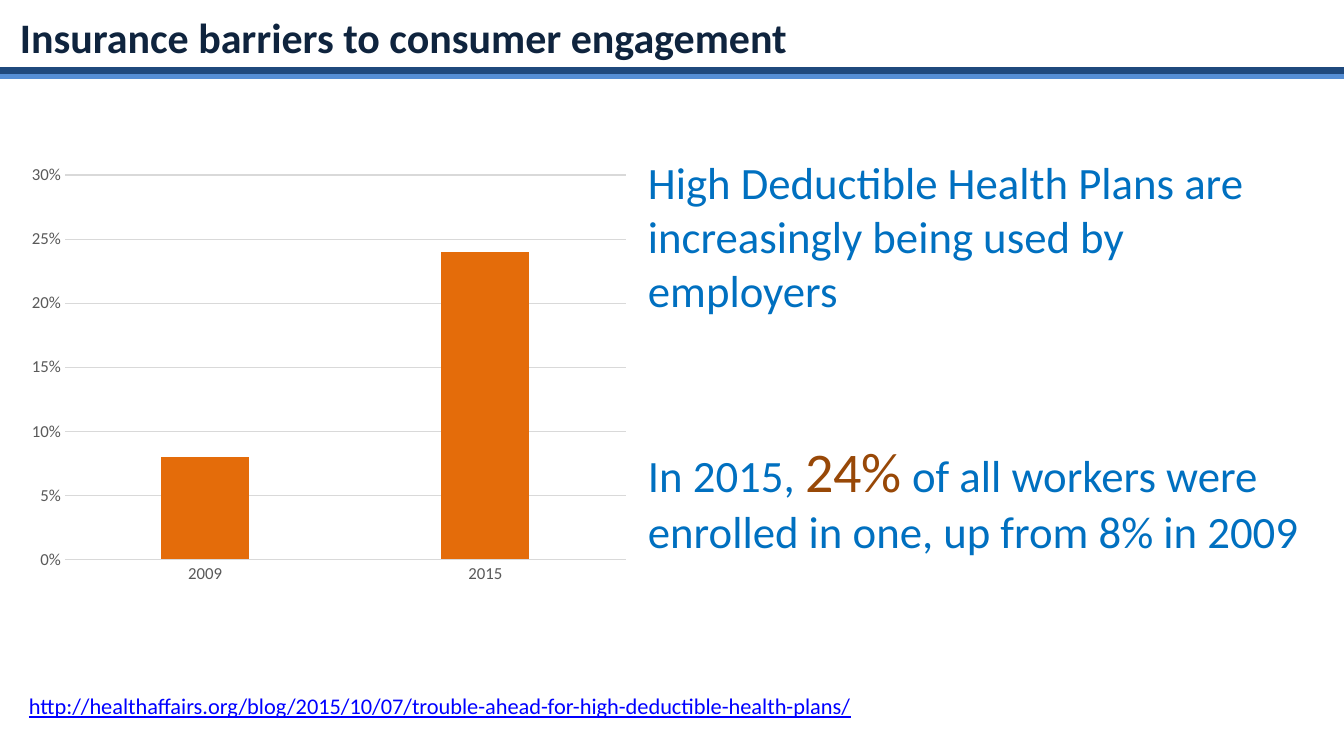
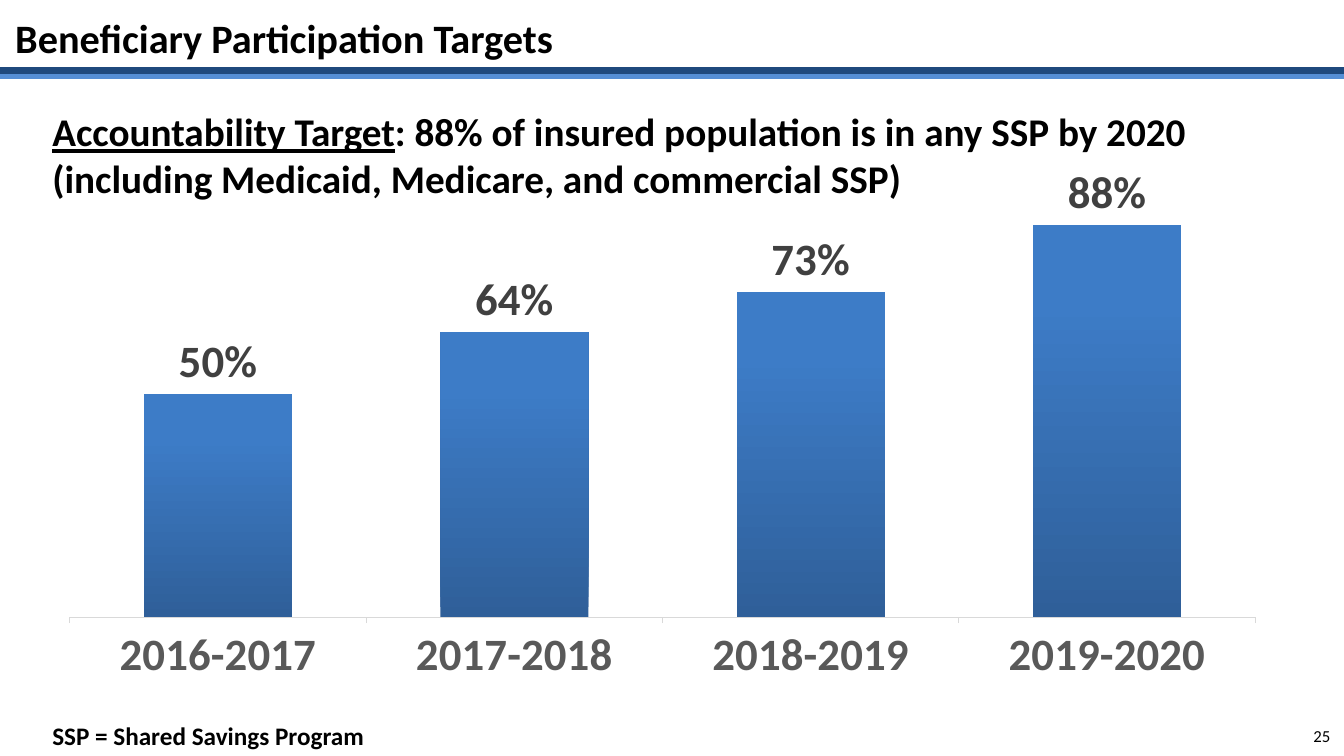
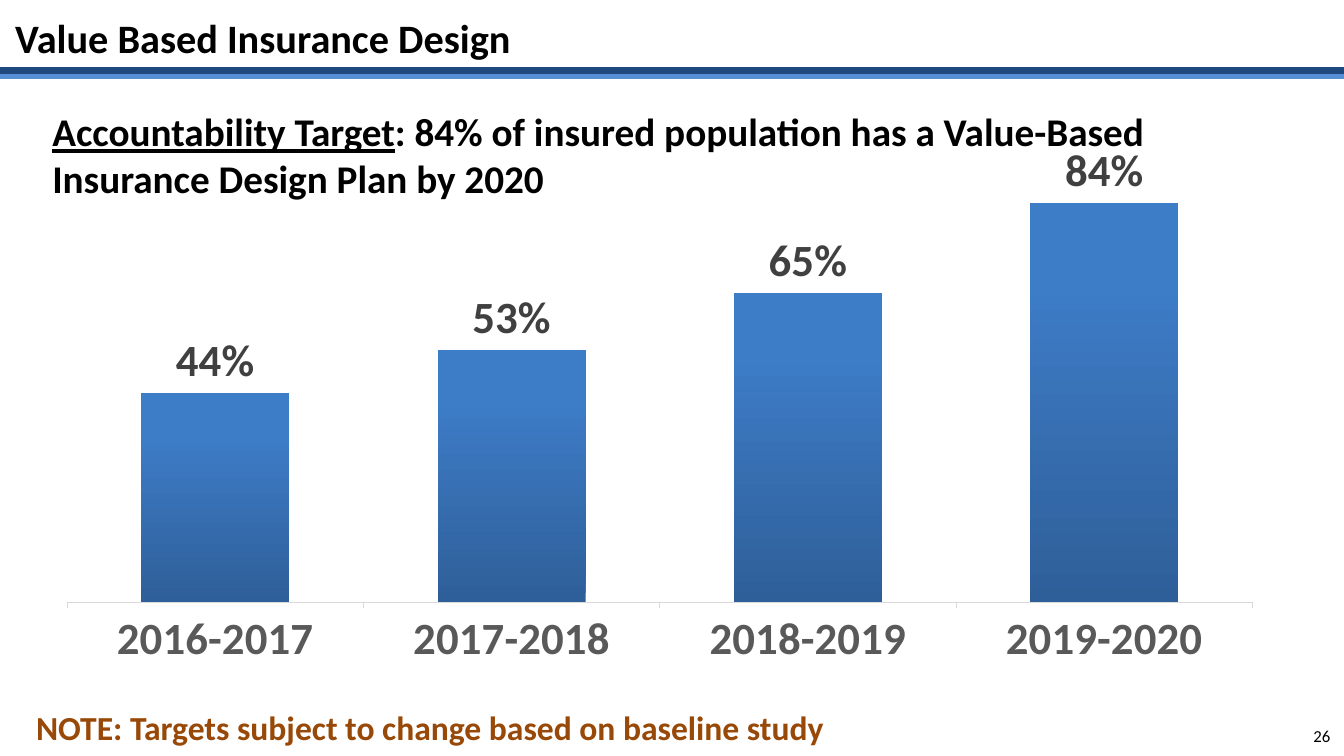
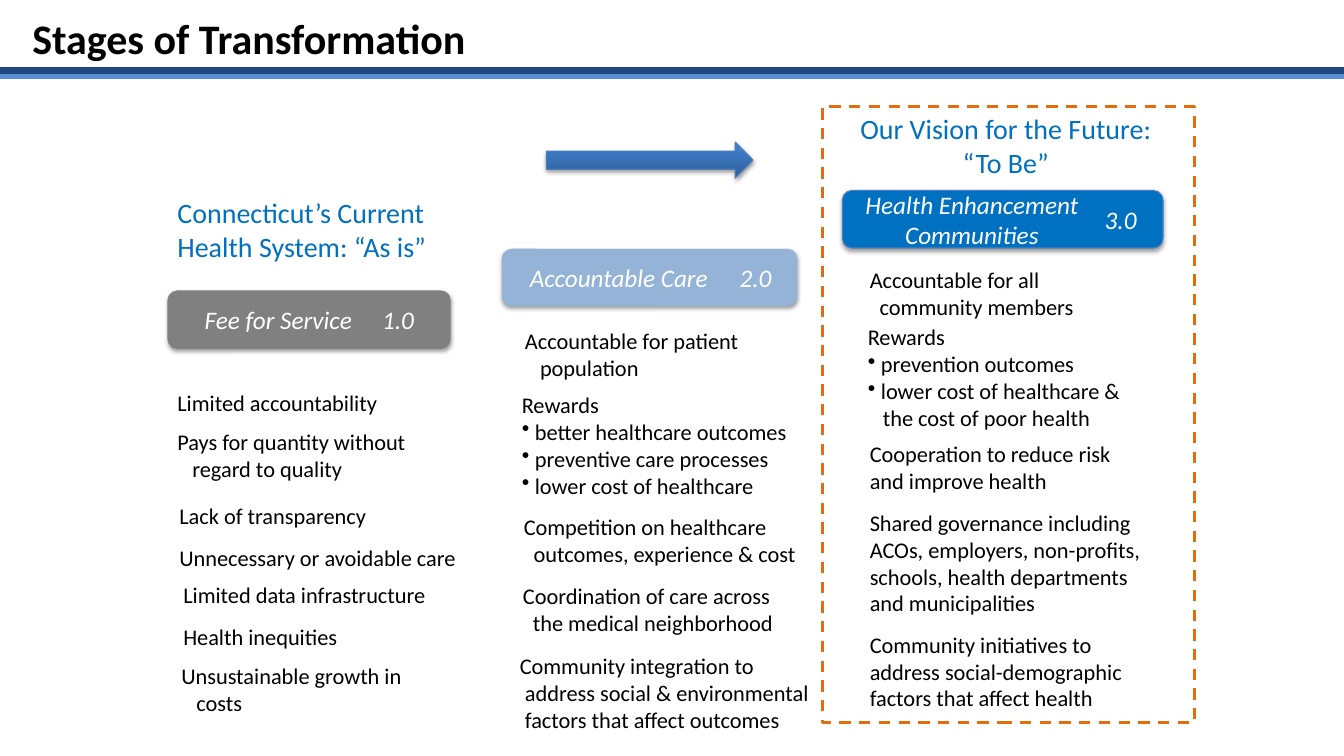
from dataclasses import dataclass
from typing import NamedTuple

from lxml.etree import SubElement
from pptx import Presentation
from pptx.chart.data import CategoryChartData
from pptx.dml.color import RGBColor
from pptx.enum.chart import XL_CHART_TYPE, XL_LABEL_POSITION, XL_TICK_MARK
from pptx.enum.dml import MSO_LINE
from pptx.enum.shapes import MSO_CONNECTOR, MSO_SHAPE
from pptx.enum.text import MSO_ANCHOR, PP_ALIGN
from pptx.oxml import parse_xml
from pptx.oxml.ns import nsdecls, qn
from pptx.util import Cm, Pt

FONT = "Calibri"
BLACK = RGBColor(0x00, 0x00, 0x00)
WHITE = RGBColor(0xFF, 0xFF, 0xFF)
INK_NAVY = RGBColor(0x0F, 0x24, 0x3E)
RULE_NAVY = RGBColor(0x1F, 0x49, 0x7D)
RULE_BLUE = RGBColor(0x55, 0x8E, 0xD5)
BRIGHT_BLUE = RGBColor(0x00, 0x70, 0xC0)
LINK_BLUE = RGBColor(0x00, 0x00, 0xFF)
PALE_BLUE = RGBColor(0x95, 0xB3, 0xD7)
EDGE_BLUE = RGBColor(0x4B, 0x7E, 0xBC)
GRADIENT_DARK = RGBColor(0x2F, 0x5F, 0x99)
GRADIENT_LIGHT = RGBColor(0x3D, 0x7C, 0xC7)
ORANGE = RGBColor(0xE4, 0x6C, 0x0A)
BROWN = RGBColor(0x98, 0x48, 0x07)
GRAY = RGBColor(0x80, 0x80, 0x80)
AXIS_GRAY = RGBColor(0x59, 0x59, 0x59)
LABEL_GRAY = RGBColor(0x40, 0x40, 0x40)
GRID_GRAY = RGBColor(0xD9, 0xD9, 0xD9)

SLIDE_WIDTH = 33.87
VERSION_ZONE = 1.55
BULLET_INDENT = 0.33


class Box(NamedTuple):
    """Position and size in centimetres."""
    left: float
    top: float
    width: float
    height: float

    def lengths(self) -> tuple:
        return tuple(Cm(value) for value in self)


@dataclass(frozen=True)
class Run:
    text: str
    size: float = 16
    color: RGBColor = BLACK
    bold: bool = False
    italic: bool = False
    underline: bool = False


@dataclass(frozen=True)
class Line:
    text: str
    indent: float = 0
    bullet: bool = False


@dataclass(frozen=True)
class Note:
    left: float
    top: float
    lines: tuple


@dataclass(frozen=True)
class Stage:
    name: str
    version: str
    version_left: float
    badge: Box
    fill: RGBColor
    edge: RGBColor | None
    note_width: float
    notes: tuple


@dataclass(frozen=True)
class Target:
    """One slide with an accountability target and its yearly values."""
    title: str
    statement: str
    number: str
    values: tuple
    chart_box: Box
    plot: tuple
    maximum: float
    footnote: Run
    footnote_box: Box


def add_runs(paragraph, runs) -> None:
    for item in runs:
        run = paragraph.add_run()
        run.text = item.text
        font = run.font
        font.name, font.size = FONT, Pt(item.size)
        font.bold, font.italic = item.bold, item.italic
        font.underline = item.underline
        font.color.rgb = item.color


def add_text(slide, box: Box, *runs: Run, align=PP_ALIGN.LEFT, anchor=MSO_ANCHOR.TOP):
    shape = slide.shapes.add_textbox(*box.lengths())
    frame = shape.text_frame
    frame.word_wrap = True
    frame.vertical_anchor = anchor
    frame.paragraphs[0].alignment = align
    add_runs(frame.paragraphs[0], runs)
    return shape


def add_slide(presentation, title: Run, box: Box):
    slide = presentation.slides.add_slide(presentation.slide_layouts[5])
    shape = slide.shapes.title
    shape.left, shape.top, shape.width, shape.height = box.lengths()
    frame = shape.text_frame
    frame.vertical_anchor = MSO_ANCHOR.MIDDLE
    frame.paragraphs[0].alignment = PP_ALIGN.LEFT
    add_runs(frame.paragraphs[0], [title])
    return slide


def move_header_rules_to_layout(slide) -> None:
    """Draw the two title rules and store them in the slide's layout."""
    for shape_id, (top, color) in enumerate(((1.9, RULE_BLUE), (1.78, RULE_NAVY)), 101):
        rule = slide.shapes.add_connector(
            MSO_CONNECTOR.STRAIGHT, Cm(0), Cm(top), Cm(SLIDE_WIDTH), Cm(top))
        rule.line.color.rgb, rule.line.width = color, Pt(4.5)
        element = rule._element
        SubElement(element.spPr, qn("a:effectLst"))
        element.nvCxnSpPr.cNvPr.set("id", str(shape_id))
        slide.slide_layout.shapes._spTree.append(element)


def fill_gradient(fill) -> None:
    fill.gradient()
    fill.gradient_angle = 90
    stops = ((0, GRADIENT_DARK), (0.8, GRADIENT_LIGHT))
    for stop, (position, color) in zip(fill.gradient_stops, stops):
        stop.position = position
        stop.color.rgb = color


def add_shape(slide, kind, box: Box, edge: RGBColor | None, edge_width: float = 0.75):
    shape = slide.shapes.add_shape(kind, *box.lengths())
    shape.shadow.inherit = False
    if edge is None:
        shape.line.fill.background()
    else:
        shape.line.color.rgb, shape.line.width = edge, Pt(edge_width)
    return shape


def add_drop_shadow(shape) -> None:
    effects = shape._element.spPr.find(qn("a:effectLst"))
    effects.append(parse_xml(
        f'<a:outerShdw {nsdecls("a")} blurRad="40000" dist="20000" dir="5400000" '
        'rotWithShape="0"><a:srgbClr val="000000"><a:alpha val="38000"/>'
        '</a:srgbClr></a:outerShdw>'))


def set_font(font, size: float, color: RGBColor, bold: bool) -> None:
    font.name, font.size, font.bold = FONT, Pt(size), bold
    font.color.rgb = color


def set_plot_area(chart, plot) -> None:
    """Place the inner plot area; plot holds x, y, width, height as fractions."""
    area = chart._chartSpace.chart.plotArea
    for layout in area.findall(qn("c:layout")):
        area.remove(layout)
    sizes = "".join(f'<c:{tag} val="{value}"/>' for tag, value in zip("xywh", plot))
    area.insert(0, parse_xml(
        f'<c:layout {nsdecls("c")}><c:manualLayout><c:layoutTarget val="inner"/>'
        f'<c:xMode val="edge"/><c:yMode val="edge"/>{sizes}</c:manualLayout></c:layout>'))


def add_column_chart(slide, box: Box, categories, values, plot, maximum: float,
                     gap: int, overlap: int, size: float, bold: bool):
    data = CategoryChartData(number_format="0%")
    data.categories = categories
    data.add_series("Series 1", values)
    chart = slide.shapes.add_chart(
        XL_CHART_TYPE.COLUMN_CLUSTERED, *box.lengths(), data).chart
    chart.has_legend = chart.has_title = False
    set_font(chart.font, size, BLACK, bold)
    set_plot_area(chart, plot)
    columns = chart.plots[0]
    columns.vary_by_categories = False
    columns.gap_width, columns.overlap = gap, overlap
    columns.series[0].invert_if_negative = False
    for axis in (chart.category_axis, chart.value_axis):
        axis.major_tick_mark = axis.minor_tick_mark = XL_TICK_MARK.NONE
        set_font(axis.tick_labels.font, size, AXIS_GRAY, bold)
    chart.category_axis.format.line.color.rgb = GRID_GRAY
    chart.category_axis.format.line.width = Pt(0.75)
    axis = chart.value_axis
    axis.minimum_scale, axis.maximum_scale = 0, maximum
    axis.tick_labels.number_format = "0%"
    axis.tick_labels.number_format_is_linked = False
    axis.format.line.fill.background()
    return chart


def build_barriers(presentation) -> None:
    slide = add_slide(presentation, Run("Insurance barriers to consumer engagement",
                                        30, INK_NAVY, bold=True), Box(0.25, 0.18, 22.71, 1.47))
    move_header_rules_to_layout(slide)
    chart = add_column_chart(
        slide, Box(0.48, 3.94, 15.6, 10.97), ("2009", "2015"), (0.08, 0.24),
        (0.074, 0.043, 0.906, 0.883), 0.3, 219, -27, 12, False)
    fill = chart.plots[0].series[0].format.fill
    fill.solid()
    fill.fore_color.rgb = ORANGE
    chart.value_axis.major_unit = 0.05
    grid = chart.value_axis.major_gridlines.format.line
    grid.color.rgb, grid.width = GRID_GRAY, Pt(0.75)
    add_text(slide, Box(16.08, 3.78, 17.12, 4.37),
             Run("High Deductible Health Plans are increasingly being used by employers",
                 32, BRIGHT_BLUE))
    add_text(slide, Box(16.08, 10.87, 17.12, 3.33),
             Run("In 2015, ", 32, BRIGHT_BLUE), Run("24%", 40, BROWN),
             Run(" of all workers were enrolled in one, up from 8% in 2009", 32, BRIGHT_BLUE))
    add_text(slide, Box(0.48, 17.32, 29.97, 0.94),
             Run("http://healthaffairs.org/blog/2015/10/07/"
                 "trouble-ahead-for-high-deductible-health-plans/",
                 16, LINK_BLUE, underline=True))


TARGETS = (
    Target("Beneficiary Participation Targets",
           ": 88% of insured population is in any SSP by 2020 "
           "(including Medicaid, Medicare, and commercial SSP)",
           "25", (0.5, 0.64, 0.73, 0.88), Box(1.14, 4.06, 31.12, 13.41),
           (0.02, 0.019, 0.96, 0.838), 1.0,
           Run("SSP = Shared Savings Program", 18, bold=True), Box(1.07, 18.03, 21.89, 1.02)),
    Target("Value Based Insurance Design",
           ": 84% of insured population has a Value-Based Insurance Design Plan by 2020",
           "26", (0.44, 0.53, 0.65, 0.84), Box(1.07, 3.61, 31.12, 13.41),
           (0.02, 0.054, 0.96, 0.808), 0.9,
           Run("NOTE: Targets subject to change based on baseline study", 24, BROWN, bold=True),
           Box(0.66, 17.7, 22, 1.27)),
)


def build_target(presentation, target: Target) -> None:
    slide = add_slide(presentation, Run(target.title, 28.8, bold=True),
                      Box(0.13, 0.28, 22.86, 1.32))
    chart = add_column_chart(
        slide, target.chart_box, ("2016-2017", "2017-2018", "2018-2019", "2019-2020"),
        target.values, target.plot, target.maximum, 100, -24, 32, True)
    chart.category_axis.major_tick_mark = XL_TICK_MARK.OUTSIDE
    chart.value_axis.has_major_gridlines = False
    chart.value_axis.visible = False
    columns = chart.plots[0]
    fill_gradient(columns.series[0].format.fill)
    columns.has_data_labels = True
    labels = columns.data_labels
    labels.show_value = True
    labels.position = XL_LABEL_POSITION.OUTSIDE_END
    labels.number_format, labels.number_format_is_linked = "0%", False
    set_font(labels.font, 32, LABEL_GRAY, True)
    add_text(slide, Box(1.07, 2.59, 29.82, 2.64),
             Run("Accountability Target", 28, bold=True, underline=True),
             Run(target.statement, 28, bold=True))
    add_text(slide, target.footnote_box, target.footnote)
    add_text(slide, Box(25.88, 18.03, 7.9, 1.02), Run(target.number, 12),
             align=PP_ALIGN.RIGHT, anchor=MSO_ANCHOR.MIDDLE)


STAGES = (
    Stage("Fee for Service", "1.0", 9.63, Box(4.22, 7.32, 7.14, 1.47), GRAY, None, 7.6, (
        Note(4.22, 9.68, (Line("Limited accountability"),)),
        Note(4.22, 10.67, (Line("Pays for quantity without"),
                           Line("regard to quality", 0.38))),
        Note(4.27, 12.52, (Line("Lack of transparency"),)),
        Note(4.27, 13.59, (Line("Unnecessary or avoidable care"),)),
        Note(4.37, 14.53, (Line("Limited data infrastructure"),)),
        Note(4.37, 15.57, (Line("Health inequities"),)),
        Note(4.32, 16.56, (Line("Unsustainable growth in"), Line("costs", 0.38))),
    )),
    Stage("Accountable Care", "2.0", 18.64, Box(12.65, 6.27, 7.44, 1.45), PALE_BLUE, None, 8.2, (
        Note(12.98, 8.13, (Line("Accountable for patient"), Line("population", 0.38))),
        Note(12.9, 9.73, (Line("Rewards"), Line("better healthcare outcomes", bullet=True),
                          Line("preventive care processes", bullet=True),
                          Line("lower cost of healthcare", bullet=True))),
        Note(12.95, 12.8, (Line("Competition on healthcare"),
                           Line("outcomes, experience & cost", 0.25))),
        Note(12.93, 14.55, (Line("Coordination of care across"),
                            Line("the medical neighborhood", 0.25))),
        Note(12.85, 16.31, (Line("Community integration to"),
                            Line("address social & environmental", 0.13),
                            Line("factors that affect outcomes", 0.13))),
    )),
    Stage("Health Enhancement Communities", "3.0", 27.84, Box(21.23, 4.8, 8.08, 1.45),
          BRIGHT_BLUE, EDGE_BLUE, 7.47, (
        Note(21.67, 6.58, (Line("Accountable for all"), Line("community members", 0.25))),
        Note(21.62, 8.03, (Line("Rewards"), Line("prevention outcomes", bullet=True),
                           Line("lower cost of healthcare &", bullet=True),
                           Line("the cost of poor health", 0.38))),
        Note(21.67, 10.97, (Line("Cooperation to reduce risk and improve health"),)),
        Note(21.67, 12.7, (Line("Shared governance including ACOs, employers, non-profits, "
                                "schools, health departments and municipalities"),)),
        Note(21.67, 15.77, (Line("Community initiatives to address social-demographic "
                                 "factors that affect health"),)),
    )),
)


def add_note(slide, note: Note, width: float) -> None:
    box = Box(note.left, note.top, width, 0.26 + 0.68 * len(note.lines))
    frame = add_text(slide, box).text_frame
    for index, line in enumerate(note.lines):
        paragraph = frame.add_paragraph() if index else frame.paragraphs[0]
        properties = paragraph._p.get_or_add_pPr()
        indent = BULLET_INDENT if line.bullet else line.indent
        properties.set("marL", str(Cm(indent)))
        if line.bullet:
            properties.set("indent", str(-Cm(indent)))
            SubElement(properties, qn("a:buChar")).set("char", "•")
        add_runs(paragraph, [Run(line.text)])


def add_stage(slide, stage: Stage) -> None:
    box = stage.badge
    badge = add_shape(slide, MSO_SHAPE.ROUNDED_RECTANGLE, box, stage.edge)
    badge.fill.solid()
    badge.fill.fore_color.rgb = stage.fill
    add_drop_shadow(badge)
    frame = badge.text_frame
    frame.word_wrap = True
    frame.vertical_anchor = MSO_ANCHOR.MIDDLE
    frame.margin_left, frame.margin_right = Cm(0), Cm(VERSION_ZONE)
    frame.margin_top = frame.margin_bottom = Cm(0)
    frame.paragraphs[0].alignment = PP_ALIGN.CENTER
    add_runs(frame.paragraphs[0], [Run(stage.name, 18, WHITE, italic=True)])
    version = add_text(slide, Box(stage.version_left, box.top, 1.3, box.height),
                       Run(stage.version, 18, WHITE, italic=True), anchor=MSO_ANCHOR.MIDDLE)
    version.text_frame.margin_left = version.text_frame.margin_right = Cm(0)
    for note in stage.notes:
        add_note(slide, note, stage.note_width)


def build_stages(presentation) -> None:
    slide = add_slide(presentation, Run("Stages of Transformation", 30, bold=True),
                      Box(0.56, 0, 22.48, 1.9))
    arrow = add_shape(slide, MSO_SHAPE.RIGHT_ARROW, Box(13.77, 3.58, 5.21, 0.91), EDGE_BLUE)
    fill_gradient(arrow.fill)
    add_drop_shadow(arrow)
    for stage in STAGES:
        add_stage(slide, stage)
    vision_frame = add_shape(slide, MSO_SHAPE.RECTANGLE, Box(20.73, 2.69, 9.37, 15.52), ORANGE, 2)
    vision_frame.fill.background()
    vision_frame.line.dash_style = MSO_LINE.DASH
    add_text(slide, Box(4.22, 4.8, 8.48, 1.96),
             Run("Connecticut’s Current Health System: “As is”", 20, BRIGHT_BLUE))
    add_text(slide, Box(21.11, 2.69, 8.48, 1.96),
             Run("Our Vision for the Future: “To Be”", 20, BRIGHT_BLUE), align=PP_ALIGN.CENTER)


def main() -> None:
    presentation = Presentation()
    presentation.slide_width, presentation.slide_height = Cm(SLIDE_WIDTH), Cm(19.05)
    build_barriers(presentation)
    for target in TARGETS:
        build_target(presentation, target)
    build_stages(presentation)
    presentation.save("out.pptx")


if __name__ == "__main__":
    main()
